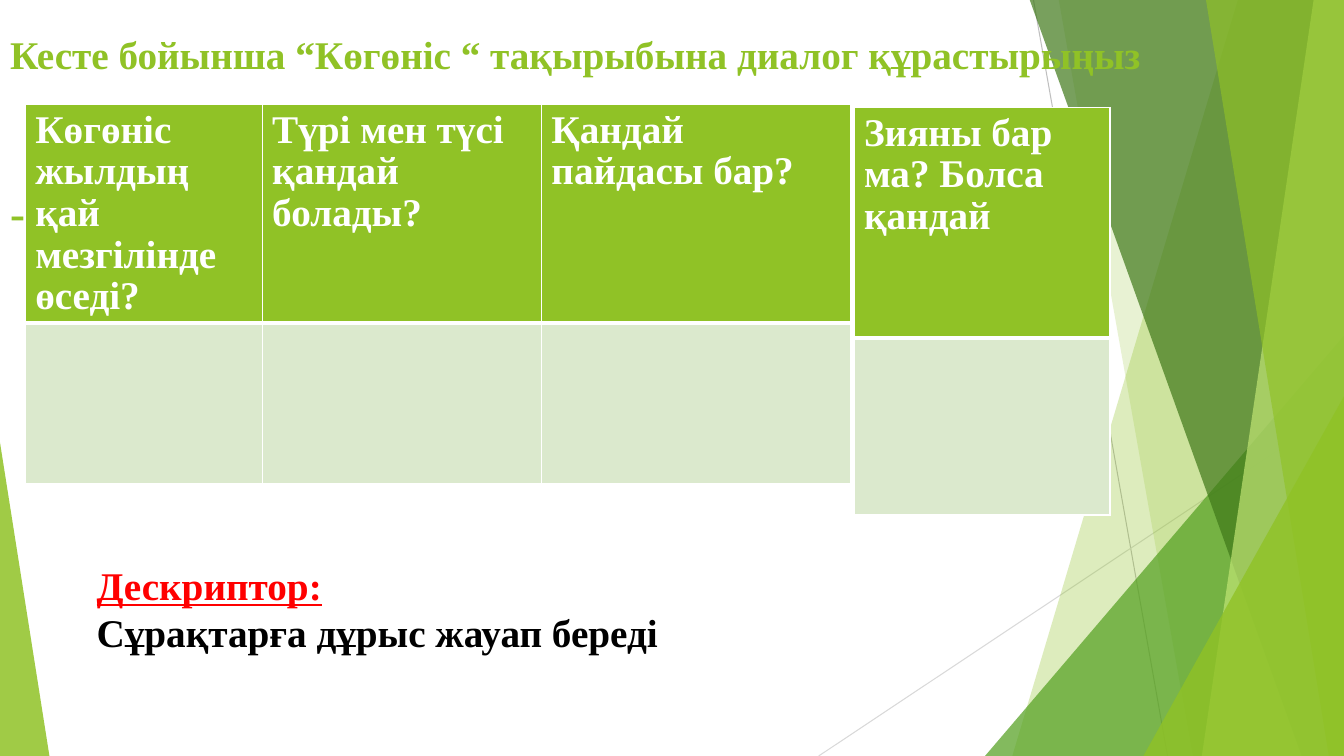
from lxml import etree
from pptx import Presentation
from pptx import util as u
from pptx.dml.color import RGBColor
from pptx.enum import shapes, text
from pptx.oxml import ns

GREEN = RGBColor(0x90, 0xC2, 0x26)
LEAF = RGBColor(0x54, 0xA0, 0x21)
DARK = RGBColor(0x3F, 0x78, 0x19)
LIME = RGBColor(0xC0, 0xE4, 0x74)
PALE = RGBColor(0xDB, 0xE9, 0xCD)
GREY = RGBColor(0xBF, 0xBF, 0xBF)
SOFT = RGBColor(0xD9, 0xD9, 0xD9)
WHITE = RGBColor(0xFF, 0xFF, 0xFF)
BLACK = RGBColor(0, 0, 0)
RED = RGBColor(0xFF, 0, 0)
WIDE, HIGH, TOP = 13.33, 7.5, -0.01


class Page:
    font = "Times New Roman"
    size = 28

    def __init__(self, deck):
        self.slide = deck.slides.add_slide(deck.slide_layouts[5])
        self.items = self.slide.shapes

    def line(self, start, end, color):
        ends = [u.Inches(n) for n in (*start, *end)]
        item = self.items.add_connector(shapes.MSO_CONNECTOR.STRAIGHT, *ends)
        item.line.color.rgb = color
        item.line.width = u.Pt(0.75)
        etree.SubElement(item.line._get_or_add_ln().getparent(), ns.qn("a:effectLst"))

    def paint(self, item, color, alpha):
        item.shadow.inherit = False
        item.line.fill.background()
        item.fill.solid()
        item.fill.fore_color.rgb = color
        tint = item.fill._xPr.find(".//" + ns.qn("a:srgbClr"))
        etree.SubElement(tint, ns.qn("a:alpha"), val=str(alpha * 1000))

    def band(self, head, foot, color, alpha):
        dots = [(head, TOP), (WIDE, TOP), (WIDE, HIGH), (foot, HIGH)]
        dots = [(u.Inches(x), u.Inches(y)) for x, y in dots]
        pen = self.items.build_freeform(*dots[0])
        pen.add_line_segments(dots[1:], close=True)
        self.paint(pen.convert_to_shape(), color, alpha)

    def wedge(self, left, top, width, tip, color, alpha):
        box = [u.Inches(n) for n in (left, top, width, HIGH - top)]
        item = self.items.add_shape(shapes.MSO_SHAPE.ISOSCELES_TRIANGLE, *box)
        item.adjustments[0] = tip
        self.paint(item, color, alpha)

    def run(self, para, words, color, size=None, under=None):
        para.alignment = text.PP_ALIGN.LEFT
        run = para.add_run()
        run.text = words
        run.font.name = self.font
        run.font.size = u.Pt(size or self.size)
        run.font.bold = True
        run.font.underline = under
        run.font.color.rgb = color

    def title(self, words, mark, gap, size):
        item = self.items.title
        self.items._spTree.append(item._element)
        item.left, item.top = u.Inches(0), u.Inches(0.25)
        item.width, item.height = u.Inches(11.66), u.Inches(1.9)
        frame = item.text_frame
        frame.auto_size = text.MSO_AUTO_SIZE.NONE
        frame.vertical_anchor = text.MSO_ANCHOR.TOP
        para = frame.paragraphs[0]
        self.run(para, words, GREEN)
        for _ in range(gap):
            para.add_line_break()
        self.run(para, mark, GREEN, size)
        for rest in para._p.findall(ns.qn("a:br")):
            look = etree.SubElement(rest, ns.qn("a:rPr"), sz=str(size * 100), b="1")
            etree.SubElement(look, ns.qn("a:latin"), typeface=self.font)

    def note(self, left, top, width, height, lines):
        box = [u.Inches(n) for n in (left, top, width, height)]
        frame = self.items.add_textbox(*box).text_frame
        frame.word_wrap = True
        for i, (words, color, under) in enumerate(lines):
            para = frame.add_paragraph() if i else frame.paragraphs[0]
            self.run(para, words, color, under=under)

    def edge(self, cell, sides):
        props = cell._tc.get_or_add_tcPr()
        for i, (side, width) in enumerate(sides.items()):
            line = etree.Element(ns.qn("a:ln" + side), w=str(u.Pt(width)))
            fill = etree.SubElement(line, ns.qn("a:solidFill"))
            etree.SubElement(fill, ns.qn("a:srgbClr"), val=str(WHITE))
            props.insert(i, line)

    def table(self, left, top, cols, rows, heads):
        box = [u.Inches(n) for n in (left, top, sum(cols), sum(rows))]
        grid = self.items.add_table(len(rows), len(cols), *box).table
        for row, height in zip(grid.rows, rows):
            row.height = u.Inches(height)
        for i, (width, words) in enumerate(zip(cols, heads)):
            grid.columns[i].width = u.Inches(width)
            head, body = grid.cell(0, i), grid.cell(1, i)
            para = head.text_frame.paragraphs[0]
            para.line_spacing = 0.96
            self.run(para, words, WHITE)
            for cell, color in ((head, GREEN), (body, PALE)):
                cell.fill.solid()
                cell.fill.fore_color.rgb = color
            self.edge(head, {"L": 1, "R": 1, "T": 1, "B": 3})
            self.edge(body, {"L": 1, "R": 1, "T": 3, "B": 1})


def main():
    deck = Presentation()
    deck.slide_width, deck.slide_height = u.Inches(WIDE), u.Inches(HIGH)
    page = Page(deck)

    page.line((10.25, 0), (11.58, HIGH), GREY)
    page.line((WIDE, 4.03), (8.12, HIGH), SOFT)
    page.band(12.28, 10.04, GREEN, 30)
    page.band(10.5, 11.83, GREEN, 20)
    page.wedge(9.77, 3.33, 3.56, 1, LEAF, 72)
    page.band(10.21, 12.91, DARK, 70)
    page.band(13.03, 11.92, LIME, 70)
    page.band(11.96, 13.18, GREEN, 65)
    page.wedge(11.34, 3.93, 1.99, 1, GREEN, 80)
    page.wedge(0, 4.39, 0.49, 0, GREEN, 85)

    page.title("Кесте бойынша “Көгөніс “ тақырыбына диалог құрастырыңыз", "-", 3, 32)
    page.table(0.25, 1.04, [2.35, 2.77, 3.07], [1.77, 1.59], [
        "Көгөніс жылдың қай мезгілінде өседі?",
        "Түрі мен түсі қандай болады?",
        "Қандай пайдасы бар?",
    ])
    page.note(0.86, 5.52, 6.67, 1.04, [
        ("Дескриптор:", RED, True),
        ("Сұрақтарға дұрыс жауап береді", BLACK, None),
    ])
    page.table(8.47, 1.07, [2.54], [2.28, 1.76], ["Зияны бар ма? Болса қандай"])
    deck.save("out.pptx")


if __name__ == "__main__":
    main()
